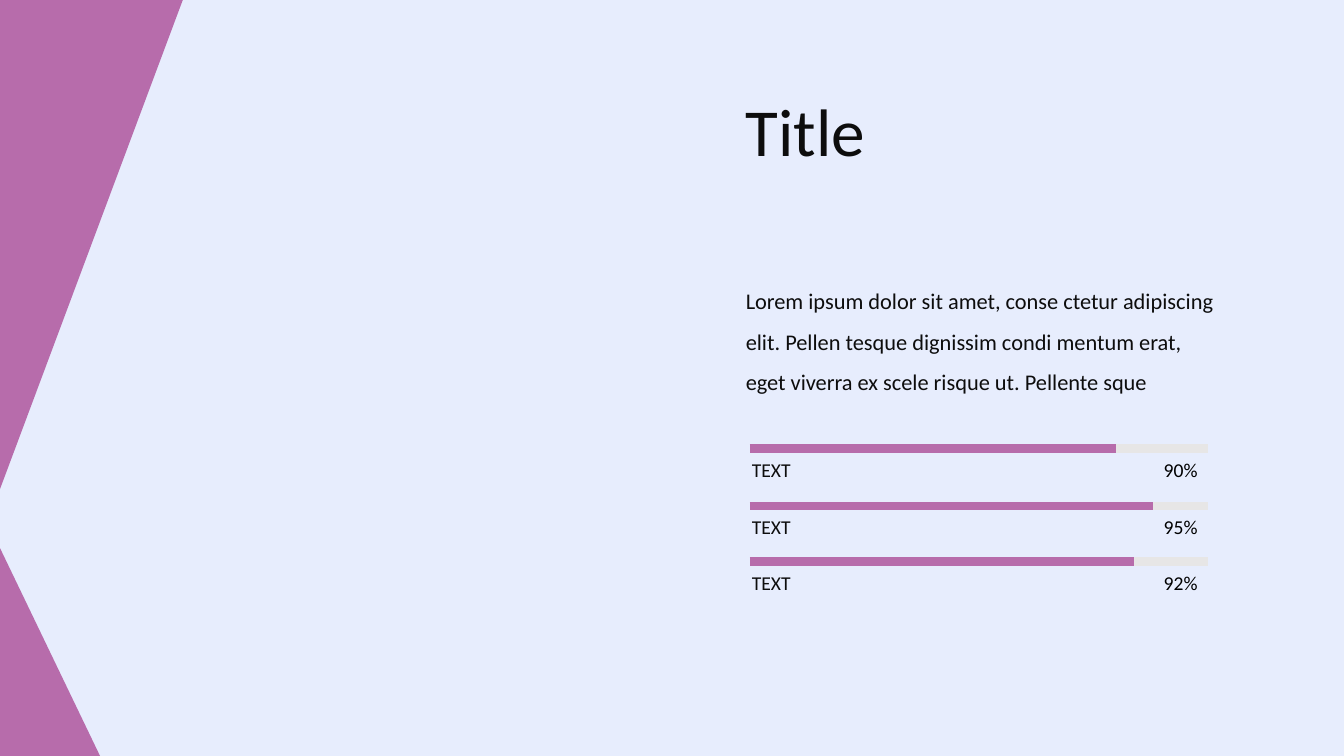
from pptx import Presentation
from pptx.dml.color import RGBColor
from pptx.enum.shapes import MSO_CONNECTOR, MSO_SHAPE
from pptx.enum.text import MSO_AUTO_SIZE, PP_ALIGN
from pptx.oxml import parse_xml
from pptx.oxml.ns import nsdecls
from pptx.util import Inches, Pt

STRAIGHT = MSO_CONNECTOR.STRAIGHT
TRIANGLE = MSO_SHAPE.RIGHT_TRIANGLE
GROW = MSO_AUTO_SIZE.SHAPE_TO_FIT_TEXT
LEFT, RIGHT = PP_ALIGN.LEFT, PP_ALIGN.RIGHT

BODY = (
    "Lorem ipsum dolor sit amet, conse ctetur adipiscing elit. "
    "Pellen tesque dignissim condi mentum erat, "
    "eget viverra ex scele risque ut. Pellente sque"
)
BARS = [
    (59.33, 0.8, "TEXT", "90%"),
    (66.93, 0.88, "TEXT", "95%"),
    (74.27, 0.84, "TEXT", "92%"),
]


def color(value):
    return RGBColor.from_string(value)


class Deck:
    FONT = "Calibri"
    PAPER, ACCENT, TRACK = "E7EDFD", "B76CAB", "E7E6E6"
    INK, BLACK = "0D0D0D", "000000"
    COLS = ROWS = 100

    def __init__(self):
        self.prs = Presentation()
        self.prs.slide_width = Inches(13.33)
        self.prs.slide_height = Inches(7.5)
        self.s = self.prs.slides.add_slide(self.prs.slide_layouts[6])
        fill = self.s.background.fill
        fill.solid()
        fill.fore_color.rgb = color(self.PAPER)

    def x(self, cols):
        return round(self.prs.slide_width * cols / self.COLS)

    def y(self, rows):
        return round(self.prs.slide_height * rows / self.ROWS)

    def box(self, left, top, width, height):
        return self.x(left), self.y(top), self.x(width), self.y(height)

    def triangle(self, *cells, flipped=False):
        sp = self.s.shapes.add_shape(TRIANGLE, *self.box(*cells))
        sp.shadow.inherit = False
        sp.fill.solid()
        sp.fill.fore_color.rgb = color(self.ACCENT)
        sp.line.fill.background()
        if flipped:
            sp.element.spPr.xfrm.set("flipV", "1")

    def text(self, text, *cells, size, ink=INK, align=LEFT, spacing=None):
        sp = self.s.shapes.add_textbox(*self.box(*cells))
        tf = sp.text_frame
        tf.word_wrap = True
        tf.auto_size = GROW
        p = tf.paragraphs[0]
        p.text = text
        p.alignment = align
        p.line_spacing = spacing
        p.font.name = self.FONT
        p.font.size = Pt(size)
        p.font.color.rgb = color(ink)

    def line(self, left, top, width, ink):
        x, y = self.x(left), self.y(top)
        cx = self.s.shapes.add_connector(
            STRAIGHT, x, y, x + self.x(width), y)
        cx.line.width = Pt(6)
        cx.line.color.rgb = color(ink)
        cx.element.spPr.append(parse_xml(f"<a:effectLst {nsdecls('a')}/>"))

    def progress(self, top, share, label, value):
        left, width = 55.8, 34.05
        self.line(left, top, width, self.TRACK)
        self.line(left, top, width * share, self.ACCENT)
        row = top + 0.58
        self.text(value, 84.37, row, 5.48, 4.93,
                  size=14, ink=self.BLACK, align=RIGHT)
        self.text(label, 55.2, row, 8.93, 4.93, size=14)


def main():
    deck = Deck()
    deck.triangle(0, 72.5, 7.5, 27.7)
    deck.triangle(0, 0, 13.6, 64.7, flipped=True)
    deck.text(BODY, 54.75, 35.6, 36.45, 16.93, size=16, spacing=1.5)
    deck.text("Title", 54.75, 11.2, 28.58, 12.13, size=48)
    for bar in BARS:
        deck.progress(*bar)
    deck.prs.save("out.pptx")


if __name__ == "__main__":
    main()
